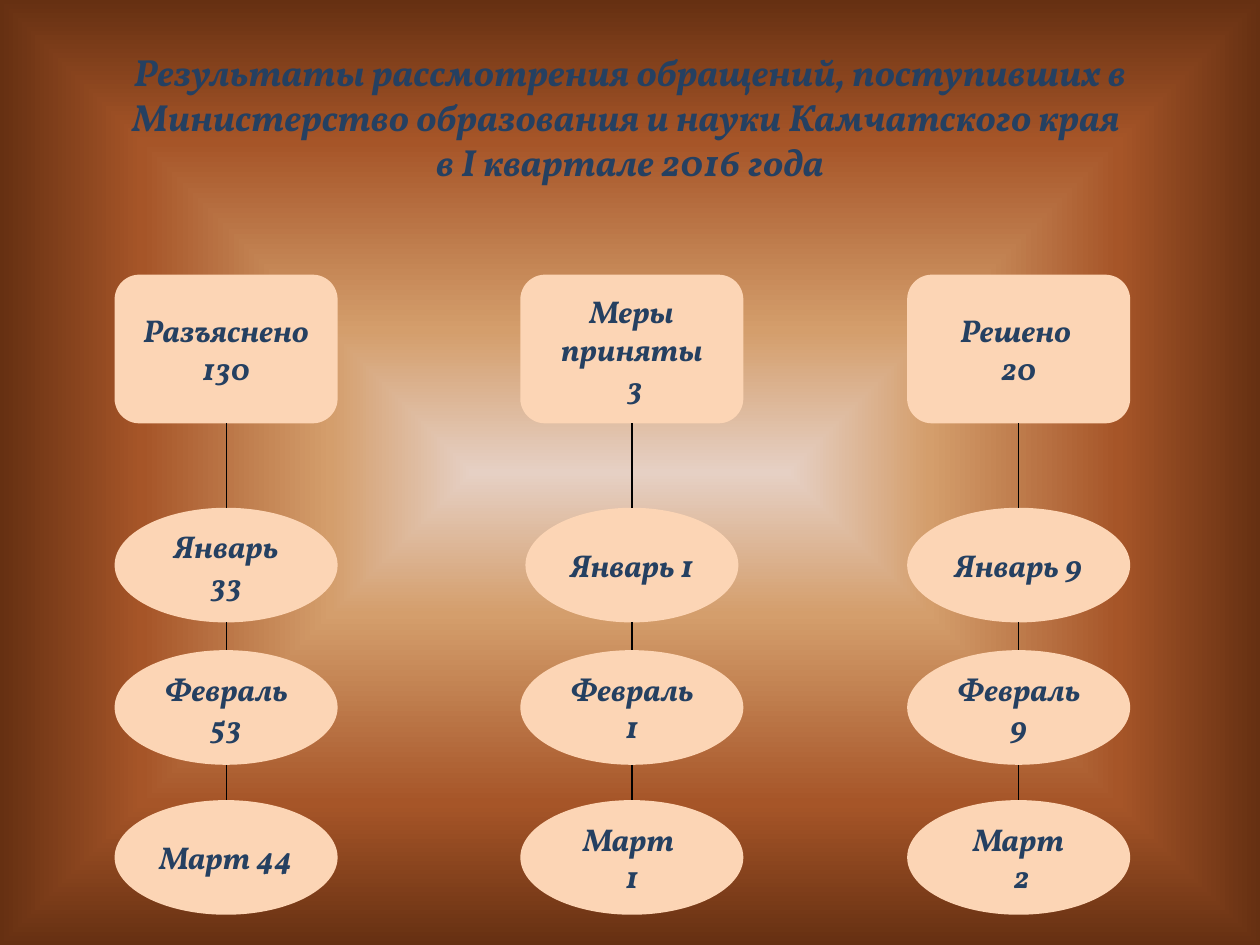
"""Build the slide on how appeals were resolved in the first quarter."""
from dataclasses import dataclass

from lxml.etree import SubElement
from pptx import Presentation
from pptx.dml.color import RGBColor
from pptx.enum.shapes import MSO_CONNECTOR as Line, MSO_SHAPE as Shape
from pptx.enum.text import MSO_ANCHOR as Anchor, MSO_AUTO_SIZE as AutoSize, PP_ALIGN as Align
from pptx.oxml import parse_xml
from pptx.oxml.ns import nsdecls, qn
from pptx.util import Inches, Pt

FONT = "Vollkorn"
NAVY = RGBColor(0x25, 0x40, 0x61)
PEACH = RGBColor(0xFC, 0xD5, 0xB5)
BLACK = RGBColor(0, 0, 0)
STOPS = (
    (0, RGBColor(0xE6, 0xD0, 0xC4)),
    (30, RGBColor(0xD4, 0x9E, 0x6C)),
    (70, RGBColor(0xA6, 0x55, 0x28)),
    (100, RGBColor(0x66, 0x30, 0x12)),
)

NODE_W = 1.77
BOX_TOP, BOX_H = 2.18, 1.18
MONTH_TOPS, MONTH_H = (4.03, 5.16, 6.35), 0.91


@dataclass
class Outcome:
    left: float
    heading: list[str]
    months: list[list[str]]
    january_w: float = NODE_W


OUTCOMES = (
    Outcome(0.91, ["Разъяснено", "130"], [["Январь 33"], ["Февраль 53"], ["Март 44"]]),
    Outcome(4.13, ["Меры приняты", " 3"], [["Январь 1"], ["Февраль 1"], ["Март ", "1"]], 1.69),
    Outcome(7.2, ["Решено ", "20"], [["Январь 9"], ["Февраль 9"], ["Март", " 2"]]),
)


def write(tf, paragraphs: list[str], *, size: float = 18, color: RGBColor = NAVY) -> None:
    """Fill a text frame with centred bold italic text; a newline is a line break."""
    tf.word_wrap = True
    tf.auto_size = AutoSize.NONE
    tf.vertical_anchor = Anchor.MIDDLE
    for i, text in enumerate(paragraphs):
        p = tf.add_paragraph() if i else tf.paragraphs[0]
        p.alignment = Align.CENTER
        for j, line in enumerate(text.split("\n")):
            if j:
                p.add_line_break()
            r = p.add_run()
            r.text = line
            font = r.font
            font.name, font.size, font.bold, font.italic = FONT, Pt(size), True, True
            font.color.rgb = color


def add_node(s, kind: Shape, center: float, top: float, width: float, height: float,
             paragraphs: list[str]):
    """Add a filled shape centred on a column."""
    sp = s.shapes.add_shape(kind, Inches(center - width / 2), Inches(top),
                            Inches(width), Inches(height))
    sp.shadow.inherit = False
    sp.fill.solid()
    sp.fill.fore_color.rgb = PEACH
    sp.line.fill.background()
    write(sp.text_frame, paragraphs)
    return sp


def add_link(s, upper, lower, center: float, *, from_box: bool) -> None:
    """Link two nodes of a column, from bottom to top."""
    x = Inches(center)
    cx = s.shapes.add_connector(Line.STRAIGHT, x, upper.top + upper.height, x, lower.top)
    if from_box:
        cx.begin_connect(upper, 2)
    cx.end_connect(lower, 0)
    cx.line.color.rgb = BLACK
    cx.line.width = Pt(0.75)
    SubElement(cx.element.spPr, qn("a:effectLst"))


def add_column(s, outcome: Outcome) -> None:
    """Draw a heading box, its months and the links between them."""
    center = outcome.left + NODE_W / 2
    nodes = [add_node(s, Shape.ROUNDED_RECTANGLE, center, BOX_TOP, NODE_W, BOX_H,
                      outcome.heading)]
    widths = (outcome.january_w, NODE_W, NODE_W)
    for top, width, text in zip(MONTH_TOPS, widths, outcome.months):
        nodes.append(add_node(s, Shape.OVAL, center, top, width, MONTH_H, text))
    for i, (upper, lower) in enumerate(zip(nodes, nodes[1:])):
        add_link(s, upper, lower, center, from_box=i == 0)


def set_background(s) -> None:
    """Give the slide a rectangular gradient from its centre."""
    stops = "".join(f'<a:gs pos="{pos * 1000}"><a:srgbClr val="{color}"/></a:gs>'
                    for pos, color in STOPS)
    s.element.cSld.insert(0, parse_xml(
        f'<p:bg {nsdecls("p", "a")}><p:bgPr><a:gradFill rotWithShape="1">'
        f'<a:gsLst>{stops}</a:gsLst><a:path path="rect">'
        '<a:fillToRect l="50000" t="50000" r="50000" b="50000"/></a:path>'
        '</a:gradFill><a:effectLst/></p:bgPr></p:bg>'))


def main() -> None:
    """Create and save the presentation."""
    prs = Presentation()
    prs.slide_width, prs.slide_height = Inches(10), Inches(7.5)
    s = prs.slides.add_slide(prs.slide_layouts[5])
    set_background(s)
    title = s.shapes.title
    title.left, title.top = Inches(0.5), Inches(0.3)
    title.width, title.height = Inches(9), Inches(1.25)
    write(title.text_frame, [
        "Результаты рассмотрения обращений, поступивших в Министерство образования "
        "и науки Камчатского края \nв I квартале 2016 года"], size=21.6)
    for outcome in OUTCOMES:
        add_column(s, outcome)
    prs.save("out.pptx")


if __name__ == "__main__":
    main()
